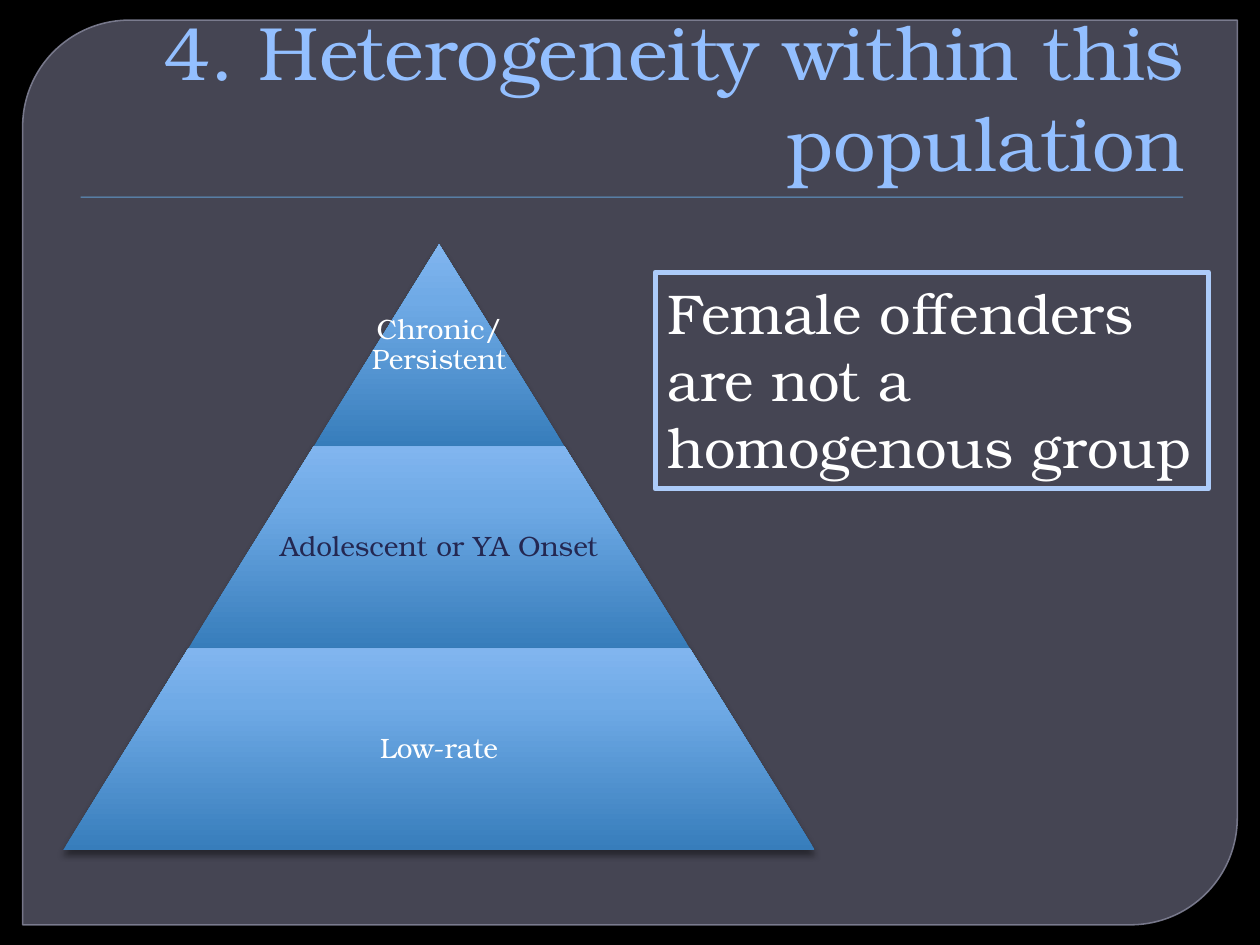
from copy import deepcopy

from lxml.etree import SubElement
from pptx import Presentation
from pptx.dml.color import RGBColor
from pptx.enum.shapes import MSO_SHAPE as Shape
from pptx.enum.text import MSO_ANCHOR as Anchor, PP_ALIGN as Align
from pptx.oxml.ns import qn
from pptx.util import Inches, Pt

FONT = "TeX Gyre Bonum"
GRADIENT = [(0, "377DBB"), (0.72, "6FAAE6"), (1, "81B5EF")]
TIERS = [
    ("Chronic/Persistent", "FFFFFF", 1),
    ("Adolescent or YA Onset", "242852", 0.65),
    ("Low-rate", "FFFFFF", 0.65),
]


def color(hex_code):
    """Return the RGB colour for a hex string."""
    return RGBColor.from_string(hex_code)


def set_alpha(fill_parent, percent):
    """Make the solid colour under an element partly transparent."""
    rgb = fill_parent.find(qn("a:solidFill")).find(qn("a:srgbClr"))
    SubElement(rgb, qn("a:alpha"), val=str(percent * 1000))


def add_shadow(shape, blur, distance, opacity):
    """Give a shape a black shadow that falls straight down."""
    effects = shape._element.spPr.find(qn("a:effectLst"))
    shadow = SubElement(effects, qn("a:outerShdw"), blurRad=str(Pt(blur)),
                        dist=str(Pt(distance)), dir="5400000", rotWithShape="0")
    black = SubElement(shadow, qn("a:srgbClr"), val="000000")
    SubElement(black, qn("a:alpha"), val=str(opacity * 1000))


def add_block(slide, kind, box, fill=None, line=None, line_width=1):
    """Add a preset shape with its fill and line set."""
    block = slide.shapes.add_shape(kind, *map(Inches, box))
    block.shadow.inherit = False
    if fill:
        block.fill.solid()
        block.fill.fore_color.rgb = color(fill)
    else:
        block.fill.background()
    if line:
        block.line.color.rgb = color(line)
        block.line.width = Pt(line_width)
    else:
        block.line.fill.background()
    return block


def write(frame, text, size, hex_code, align=Align.LEFT, anchor=Anchor.MIDDLE,
          spacing=1.0, inset=None):
    """Put one formatted paragraph into a text frame."""
    frame.word_wrap = True
    frame.vertical_anchor = anchor
    if inset is not None:
        frame.margin_left = frame.margin_right = Inches(inset)
        frame.margin_top = frame.margin_bottom = Inches(inset)
    paragraph = frame.paragraphs[0]
    paragraph.alignment = align
    paragraph.line_spacing = spacing
    run = paragraph.add_run()
    run.text = text
    run.font.name = FONT
    run.font.size = Pt(size)
    run.font.color.rgb = color(hex_code)


def add_backdrop(slide, box):
    """Draw the black background and the rounded panel."""
    slide.background.fill.solid()
    slide.background.fill.fore_color.rgb = color("000000")
    panel = add_block(slide, Shape.ROUND_2_DIAG_RECTANGLE, box, "6A6B80", "828397", 0.87)
    panel.adjustments[0] = 0.118
    panel.adjustments[1] = 0
    properties = panel._element.spPr
    set_alpha(properties, 65)
    set_alpha(properties.find(qn("a:ln")), 88)


def add_heading(slide, box):
    """Place the title and the rule beneath it."""
    left, top, width, height = box
    rule = add_block(slide, Shape.RECTANGLE,
                     (left + 0.14, top + height + 0.03, width - 0.25, 0.01), "629DD1")
    add_shadow(rule, 1, 1, 75)
    title = slide.shapes.add_textbox(*map(Inches, box))
    write(title.text_frame, "4. Heterogeneity within this population", 43.2, "93BFFF",
          align=Align.RIGHT, anchor=Anchor.BOTTOM)


def fill_gradient(shape):
    """Fill a shape with the three-stop gradient, dark at the bottom."""
    shape.fill.gradient()
    shape.fill.gradient_angle = 90
    stop_list = shape._element.spPr.find(qn("a:gradFill")).find(qn("a:gsLst"))
    stop_list.append(deepcopy(stop_list[0]))
    for stop, (position, hex_code) in zip(shape.fill.gradient_stops, GRADIENT):
        stop.position = position
        stop.color.rgb = color(hex_code)


def add_pyramid(slide, box):
    """Stack the labelled tiers, each wider than the one above."""
    left, top, width, height = box
    tier_height = height / len(TIERS)
    center = left + width / 2
    for index, (label, label_color, label_share) in enumerate(TIERS):
        tier_width = width * (index + 1) / len(TIERS)
        tier_top = top + index * tier_height
        tier = add_block(slide, Shape.TRAPEZOID,
                         (center - tier_width / 2, tier_top, tier_width, tier_height))
        tier.adjustments[0] = width / 2 / height
        fill_gradient(tier)
        add_shadow(tier, 4, 3, 43)
        label_width = tier_width * label_share
        caption = slide.shapes.add_textbox(
            *map(Inches, (center - label_width / 2, tier_top, label_width, tier_height)))
        write(caption.text_frame, label, 16, label_color, align=Align.CENTER,
              spacing=0.9, inset=0.02)


def add_callout(slide, box):
    """Place the outlined statement."""
    callout = add_block(slide, Shape.RECTANGLE, box, line="ACCBF9", line_width=3)
    write(callout.text_frame, "Female offenders are not a homogenous group", 32, "FFFFFF",
          anchor=Anchor.TOP)


def main():
    """Build and save the slide."""
    deck = Presentation()
    deck.slide_width, deck.slide_height = Inches(10), Inches(7.5)
    slide = deck.slides.add_slide(deck.slide_layouts[6])
    add_backdrop(slide, (0.18, 0.16, 9.64, 7.18))
    add_heading(slide, (0.5, 0.28, 9, 1.25))
    add_pyramid(slide, (0.5, 1.94, 5.97, 4.81))
    add_callout(slide, (5.2, 2.16, 4.39, 1.72))
    deck.save("out.pptx")


if __name__ == "__main__":
    main()
